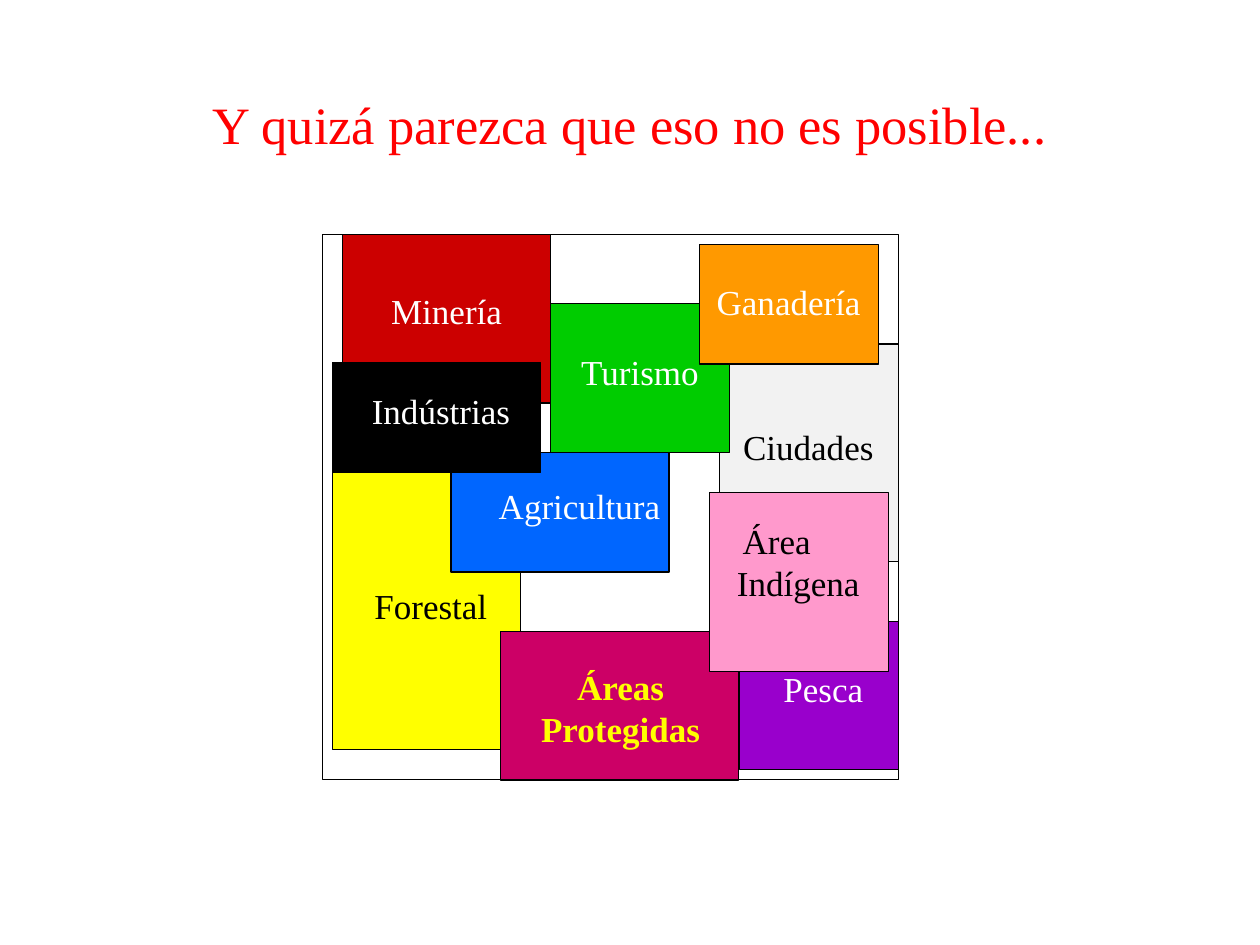
from pptx import Presentation
from pptx.dml.color import RGBColor
from pptx.enum.shapes import MSO_SHAPE
from pptx.enum.text import MSO_AUTO_SIZE, PP_ALIGN
from pptx.util import Inches, Pt

FONT = "Times New Roman"
BLACK, WHITE, RED, YELLOW = "000000", "FFFFFF", "FF0000", "FFFF00"

LAND_USES = [
    ("Ciudades", (5.71, 2.73, 1.42, 1.73), "F2F2F2", (5.39, 3.33, 2.05, 0.44), BLACK),
    ("Turismo", (4.37, 2.41, 1.42, 1.18), "00CC00", (3.98, 2.73, 2.2, 0.44), WHITE),
    ("Forestal", (2.64, 3.75, 1.49, 2.2), YELLOW, (2.32, 4.59, 2.2, 0.44), BLACK),
    ("Ganadería", (5.55, 1.94, 1.42, 0.95), "FF9900", (5.16, 2.18, 2.2, 0.44), WHITE),
    ("Pesca", (5.87, 4.93, 1.26, 1.18), "9900CC", (5.55, 5.25, 1.97, 0.44), WHITE),
    ("Agricultura", (3.58, 3.59, 1.73, 0.95), "0066FF", (3.5, 3.8, 2.2, 0.44), WHITE),
    ("Minería", (2.72, 1.86, 1.65, 1.34), "CC0000", (2.56, 2.25, 1.97, 0.44), WHITE),
    ("Indústrias", (2.64, 2.88, 1.65, 0.87), BLACK, (2.4, 3.04, 2.2, 0.44), WHITE),
    ("Áreas Protegidas", (3.97, 5.01, 1.89, 1.18), "CC0066", (3.9, 5.23, 2.05, 0.77), YELLOW),
    ("Área Indígena", (5.63, 3.91, 1.42, 1.42), "FF99CC", (5.31, 4.07, 2.05, 0.77), BLACK),
]


def color(value):
    return RGBColor.from_string(value)


class Painter:
    def __init__(self, page, font):
        self.page = page
        self.font = font

    def rectangle(self, shapes, place, fill):
        box = shapes.add_shape(MSO_SHAPE.RECTANGLE, *map(Inches, place))
        box.shadow.inherit = False
        box.fill.solid()
        box.fill.fore_color.rgb = color(fill)
        box.line.color.rgb = color(BLACK)
        box.line.width = Pt(0.75)

    def label(self, shapes, text, place, size, ink, bold=False, hang=0):
        box = shapes.add_textbox(*map(Inches, place))
        frame = box.text_frame
        frame.word_wrap = True
        frame.auto_size = MSO_AUTO_SIZE.SHAPE_TO_FIT_TEXT
        para = frame.paragraphs[0]
        para.alignment = PP_ALIGN.CENTER
        para.space_before = Pt(size / 10)
        if hang:
            properties = para._p.get_or_add_pPr()
            for name, length in (("marL", hang), ("marR", hang), ("indent", -hang)):
                properties.set(name, str(Inches(length)))
        span = para.add_run()
        span.text = text
        span.font.name = self.font
        span.font.size = Pt(size)
        span.font.bold = bold
        span.font.color.rgb = color(ink)

    def land_use(self, name, area, fill, place, ink):
        group = self.page.shapes.add_group_shape()
        self.rectangle(group.shapes, area, fill)
        hang = 0.34 if name == "Área Indígena" else 0
        self.label(group.shapes, name, place, 20, ink, name == "Áreas Protegidas", hang)


def main():
    deck = Presentation()
    deck.slide_width = Inches(10)
    deck.slide_height = Inches(7.5)
    page = deck.slides.add_slide(deck.slide_layouts[6])
    painter = Painter(page, FONT)
    painter.rectangle(page.shapes, (2.56, 1.86, 4.57, 4.33), WHITE)
    painter.label(page.shapes, "Y quizá parezca que eso no es posible...", (0, 0.68, 10, 0.6), 30, RED)
    for use in LAND_USES:
        painter.land_use(*use)
    deck.save("out.pptx")


if __name__ == "__main__":
    main()
